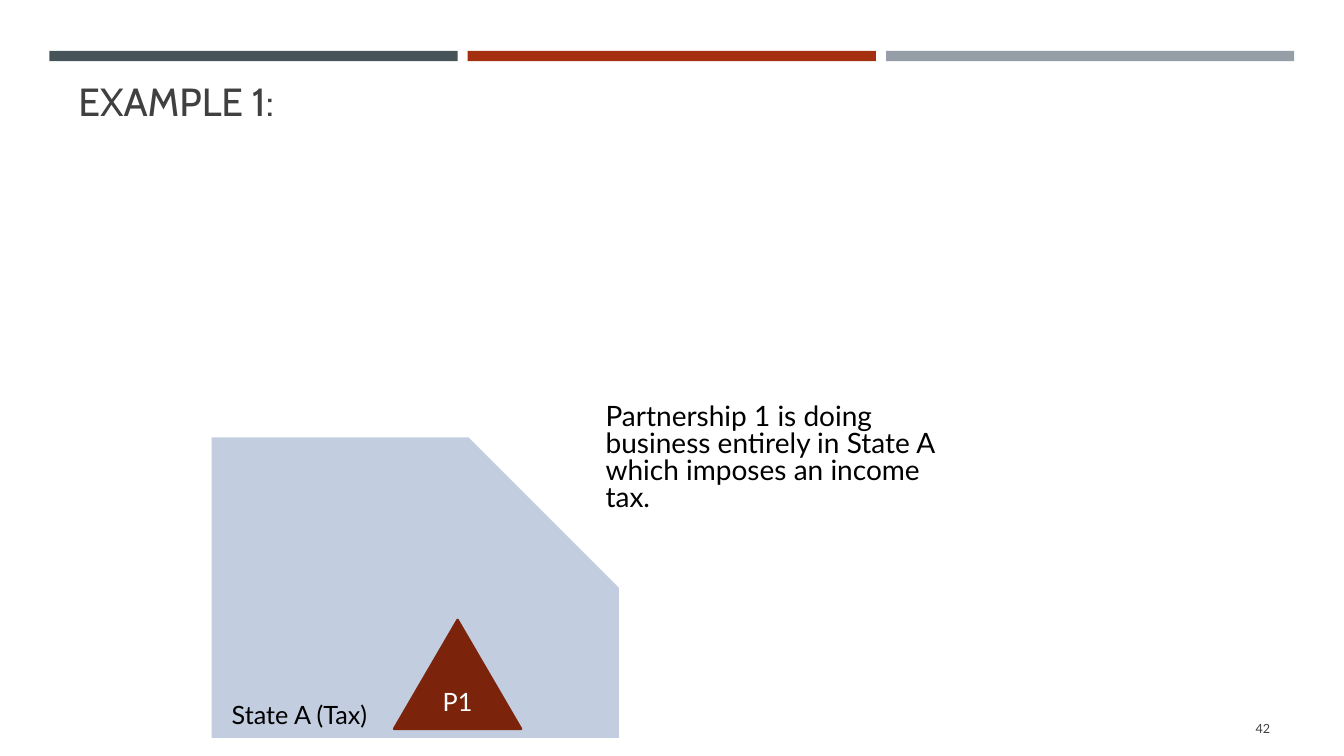
from pptx import Presentation
from pptx.dml.color import RGBColor
from pptx.enum.shapes import MSO_SHAPE
from pptx.enum.text import MSO_ANCHOR, PP_ALIGN
from pptx.util import Pt

SLATE = RGBColor(0x46, 0x53, 0x59)
RUST = RGBColor(0xA5, 0x30, 0x0F)
GREY = RGBColor(0x96, 0x9F, 0xA7)
PALE_BLUE = RGBColor(0xC2, 0xCD, 0xE0)
DARK_RUST = RGBColor(0x7C, 0x24, 0x0B)
CHARCOAL = RGBColor(0x40, 0x40, 0x40)
BLACK = RGBColor(0, 0, 0)
WHITE = RGBColor(0xFF, 0xFF, 0xFF)

SLIDE_SIZE = (960, 540)
BAND_COLOURS = [SLATE, RUST, GREY]
BAND_LEFT, BAND_TOP, BAND_WIDTH, BAND_HEIGHT, BAND_GAP = 35.3, 36.3, 291.6, 7.4, 7.2

STATE_BOX = (151.2, 312.5, 290.9, 214.6)
PARTNERSHIP_BOX = (281.5, 442.8, 90.7, 77.8)
PARTNERSHIP_NAME = "P1"

TEXTS = [
    ("EXAMPLE 1:", (49, 0, 844.6, 92.2), "Cabin", 28, CHARCOAL,
     MSO_ANCHOR.BOTTOM, PP_ALIGN.LEFT, 1.0),
    ("State A (Tax)", (158.4, 496.1, 115.9, 28.8), "Lato", 18, BLACK,
     MSO_ANCHOR.TOP, PP_ALIGN.LEFT, 1.0),
    ("Partnership 1 is doing business entirely in State A which imposes an income tax.",
     (425.5, 281.5, 262.1, 92.2), "Lato", 20, BLACK,
     MSO_ANCHOR.MIDDLE, PP_ALIGN.LEFT, 0.8),
    ("42", (831.6, 506.2, 82.8, 28.8), "Lato", 9, CHARCOAL,
     MSO_ANCHOR.MIDDLE, PP_ALIGN.RIGHT, 1.0),
]


def points(box):
    return [Pt(length) for length in box]


def add_filled(slide, preset, box, colour):
    shape = slide.shapes.add_shape(preset, *points(box))
    shape.shadow.inherit = False
    shape.fill.solid()
    shape.fill.fore_color.rgb = colour
    shape.line.fill.background()
    return shape


def write(shape, wording, font_name, size, colour, anchor, align, spacing):
    frame = shape.text_frame
    frame.word_wrap = True
    frame.vertical_anchor = anchor
    paragraph = frame.paragraphs[0]
    paragraph.text = wording
    paragraph.alignment = align
    paragraph.line_spacing = spacing
    paragraph.font.name = font_name
    paragraph.font.size = Pt(size)
    paragraph.font.color.rgb = colour


def main():
    deck = Presentation()
    deck.slide_width, deck.slide_height = points(SLIDE_SIZE)
    slide = deck.slides.add_slide(deck.slide_layouts[6])

    for column, colour in enumerate(BAND_COLOURS):
        left = BAND_LEFT + column * (BAND_WIDTH + BAND_GAP)
        add_filled(slide, MSO_SHAPE.RECTANGLE,
                   (left, BAND_TOP, BAND_WIDTH, BAND_HEIGHT), colour)

    state = add_filled(slide, MSO_SHAPE.SNIP_1_RECTANGLE, STATE_BOX, PALE_BLUE)
    state.adjustments[0] = 0.5

    partnership = add_filled(slide, MSO_SHAPE.ISOSCELES_TRIANGLE,
                             PARTNERSHIP_BOX, DARK_RUST)
    partnership.line.color.rgb = DARK_RUST
    partnership.line.width = Pt(1.75)
    write(partnership, PARTNERSHIP_NAME, "Lato", 18, WHITE,
          MSO_ANCHOR.MIDDLE, PP_ALIGN.CENTER, 1.0)

    for wording, box, *style in TEXTS:
        write(slide.shapes.add_textbox(*points(box)), wording, *style)

    deck.save("out.pptx")


if __name__ == "__main__":
    main()
